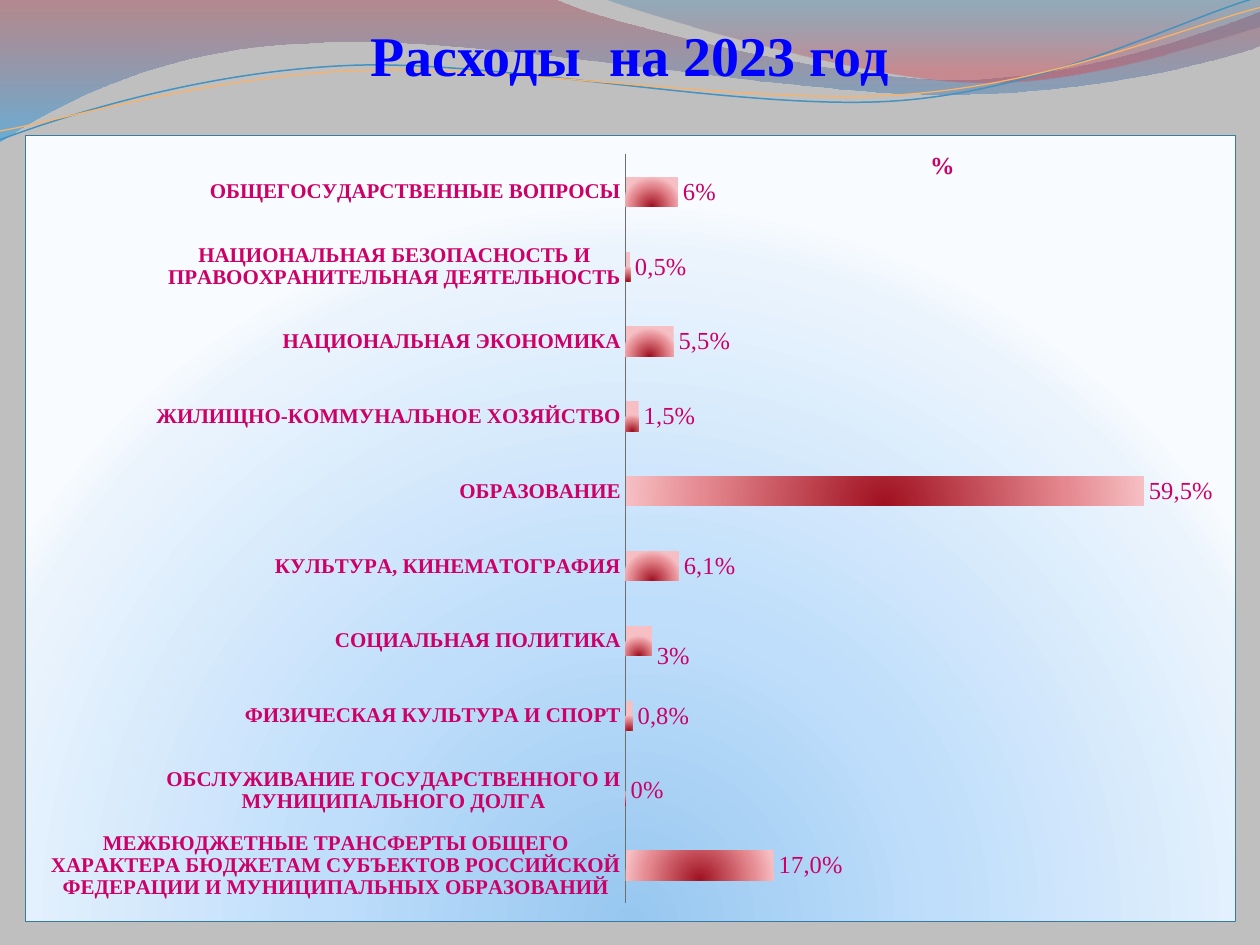
from math import cos, radians, sin

from pptx import Presentation
from pptx.chart.data import CategoryChartData
from pptx.dml.color import RGBColor
from pptx.enum.chart import XL_CHART_TYPE, XL_LABEL_POSITION, XL_TICK_LABEL_POSITION, XL_TICK_MARK
from pptx.enum.text import MSO_ANCHOR, PP_ALIGN
from pptx.oxml import parse_xml
from pptx.oxml.ns import nsdecls, qn
from pptx.util import Inches, Pt

BAR = XL_CHART_TYPE.BAR_CLUSTERED
OUT = XL_LABEL_POSITION.OUTSIDE_END
NEAR = XL_TICK_LABEL_POSITION.NEXT_TO_AXIS
NONE = XL_TICK_MARK.NONE
BOTTOM = MSO_ANCHOR.BOTTOM
CENTER = PP_ALIGN.CENTER
FACE = "Times New Roman"
PINK = "CC0066"
hue = RGBColor.from_string
UNIT = Inches(1)
GRID = 125
GLOW = '<a:path path="circle"><a:fillToRect l="50000" t="130000" r="50000" b="-30000"/></a:path>'
DOWN = '<a:lin ang="5400000" scaled="0"/>'


def blend(stops, way):
    marks = "".join(
        f'<a:gs pos="{pos * 1000}"><a:srgbClr val="{tone}"><a:alpha val="{alpha * 1000}"/></a:srgbClr></a:gs>'
        for pos, tone, alpha in stops
    )
    return parse_xml(f'<a:gradFill {nsdecls("a")} rotWithShape="1"><a:gsLst>{marks}</a:gsLst>{way}</a:gradFill>')


def place(node, after, **parts):
    for old in node.findall(qn("c:layout")):
        node.remove(old)
    body = "".join(f'<c:{key} val="{val}"/>' for key, val in parts.items())
    lay = parse_xml(f'<c:layout {nsdecls("c")}><c:manualLayout>{body}</c:manualLayout></c:layout>')
    if after:
        node.find(qn(after)).addnext(lay)
    else:
        node.insert(0, lay)


deck = Presentation()
deck.slide_width, deck.slide_height = 10 * UNIT, int(7.5 * UNIT)
slide = deck.slides.add_slide(deck.slide_layouts[6])
slide.background.fill.solid()
slide.background.fill.fore_color.rgb = hue("BFBFBF")

waves = [
    {"start": (0, 0), "turn": 0, "stops": [(0, "A84752", 45), (100, "249FE6", 55)],
     "legs": [(4.4, -0.01), (4.76, 0.17, 6.64, 0.63, 7.58, 0.63), (8.53, 0.63, 9.58, 0.26, 10, 0.09),
              (10.01, 0.36), (9.83, 0.44, 8.7, 0.76, 7.46, 0.75), (6.22, 0.75, 3.82, 0.28, 2.57, 0.34),
              (1.29, 0.36, 0.46, 0.83, -0.01, 1.13)]},
    {"start": (4.79, -0.01), "turn": 0, "stops": [(0, "2A7EAF", 30), (80, "D24B5A", 45)],
     "legs": [(5.09, 0.11, 6.82, 0.62, 7.69, 0.65), (8.56, 0.69, 9.61, 0.32, 10, 0.21), (10, 0)]},
    {"start": (0, 1.11), "turn": -2.7, "line": ("4592BF", 0.85),
     "legs": [(0.48, 0.93, 1.58, 0.57, 2.77, 0.52), (3.95, 0.47, 5.93, 0.89, 7.13, 0.8),
              (8.33, 0.71, 9.38, 0.15, 9.98, -0.02)]},
    {"start": (0, 1.04), "turn": -2.7, "line": ("F9B268", 0.75),
     "legs": [(0.47, 0.96, 1.64, 0.61, 2.83, 0.56), (4.03, 0.51, 5.97, 0.84, 7.17, 0.75),
              (8.36, 0.67, 9.41, 0.21, 10, 0.06)]},
]
for wave in waves:
    dots = [wave["start"]]
    for leg in wave["legs"]:
        dots += zip(leg[::2], leg[1::2])
    turn = radians(-wave["turn"])
    mx, my = 5, 0.58
    spots = [(int(UNIT * (mx + (x - mx) * cos(turn) - (y - my) * sin(turn))),
              int(UNIT * (my + (x - mx) * sin(turn) + (y - my) * cos(turn)))) for x, y in dots]
    pen = slide.shapes.build_freeform(*spots[0], scale=1.0)
    pen.add_line_segments(spots[1:], close="stops" in wave)
    shape = pen.convert_to_shape()
    shape.shadow.inherit = False
    shape.rotation = wave["turn"]
    edges = iter(list(shape._element.iter(qn("a:lnTo"))))
    for leg in wave["legs"]:
        edge = next(edges)
        if len(leg) == 6:
            bend = parse_xml(f'<a:cubicBezTo {nsdecls("a")}/>')
            edge.addprevious(bend)
            for part in (edge, next(edges), next(edges)):
                bend.append(part[0])
                part.getparent().remove(part)
    if "stops" in wave:
        shape.line.fill.background()
        shape._element.spPr.find(qn("a:custGeom")).addnext(blend(wave["stops"], DOWN))
    else:
        shape.fill.background()
        tone, width = wave["line"]
        shape.line.color.rgb = hue(tone)
        shape.line.width = Pt(width)

box = slide.shapes.add_textbox(0, int(0.23 * UNIT), 10 * UNIT, int(0.47 * UNIT))
frame = box.text_frame
form = {"word_wrap": True, "vertical_anchor": BOTTOM, "margin_left": 0, "margin_right": 0,
        "margin_top": Inches(0.05), "margin_bottom": 0}
for key, val in form.items():
    setattr(frame, key, val)
head = frame.paragraphs[0]
head.alignment = CENTER
run = head.add_run()
run.text = "Расходы  на 2023 год"

rows = [
    ("МЕЖБЮДЖЕТНЫЕ ТРАНСФЕРТЫ ОБЩЕГО ХАРАКТЕРА БЮДЖЕТАМ СУБЪЕКТОВ РОССИЙСКОЙ ФЕДЕРАЦИИ "
     "И МУНИЦИПАЛЬНЫХ ОБРАЗОВАНИЙ", 0.17, "17,0%"),
    ("ОБСЛУЖИВАНИЕ ГОСУДАРСТВЕННОГО И МУНИЦИПАЛЬНОГО ДОЛГА", 0, "0%"),
    ("ФИЗИЧЕСКАЯ КУЛЬТУРА И СПОРТ", 0.008, "0,8%"),
    ("СОЦИАЛЬНАЯ ПОЛИТИКА", 0.03, "3%"),
    ("КУЛЬТУРА, КИНЕМАТОГРАФИЯ", 0.061, "6,1%"),
    ("ОБРАЗОВАНИЕ", 0.595, "59,5%"),
    ("ЖИЛИЩНО-КОММУНАЛЬНОЕ ХОЗЯЙСТВО", 0.015, "1,5%"),
    ("НАЦИОНАЛЬНАЯ ЭКОНОМИКА", 0.055, "5,5%"),
    ("НАЦИОНАЛЬНАЯ БЕЗОПАСНОСТЬ И ПРАВООХРАНИТЕЛЬНАЯ ДЕЯТЕЛЬНОСТЬ", 0.005, "0,5%"),
    ("ОБЩЕГОСУДАРСТВЕННЫЕ ВОПРОСЫ", 0.06, "6%"),
]
data = CategoryChartData(number_format="0.0%")
data.categories = [row[0] for row in rows]
data.add_series("%", [row[1] for row in rows])
chart = slide.shapes.add_chart(BAR, int(0.2 * UNIT), int(1.07 * UNIT), int(9.61 * UNIT),
                               int(6.25 * UNIT), data).chart
chart.has_legend = False
chart.has_title = True
chart.chart_title.include_in_layout = False
title = chart.chart_title.text_frame.paragraphs[0].add_run()
title.text = "%"
root = chart._chartSpace
place(root.find(".//" + qn("c:title")), "c:tx", xMode="edge", yMode="edge", x=93 / GRID, y=1.5 / GRID)
place(root.find(".//" + qn("c:plotArea")), None, layoutTarget="inner", xMode="edge", yMode="edge",
      x=62 / GRID, y=3 / GRID, w=63 / GRID, h=119 / GRID)

back = parse_xml(f'<c:spPr {nsdecls("c", "a")}><a:ln w="9525"><a:solidFill><a:srgbClr val="387AA1"/>'
                 '</a:solidFill><a:prstDash val="solid"/></a:ln></c:spPr>')
back.insert(0, blend([(0, "97C7EF", 100), (43, "BFDEFB", 100), (93, "EBF4FD", 100),
                      (100, "F8FBFF", 100)], GLOW))
root.find(qn("c:chart")).addnext(back)

side, base = chart.category_axis, chart.value_axis
form = {"major_tick_mark": NONE, "minor_tick_mark": NONE, "has_major_gridlines": False}
for axis in (side, base):
    for key, val in form.items():
        setattr(axis, key, val)
side.tick_label_position = NEAR
side.format.line.color.rgb = hue("6F6F6F")
side.format.line.width = Pt(0.75)
base.tick_labels.number_format = "0.0%"
base.tick_labels.number_format_is_linked = False
base.visible = False

plot = chart.plots[0]
plot.gap_width, plot.overlap, plot.vary_by_categories = 150, -25, False
bars = plot.series[0]
bars.invert_if_negative = False
bars._element.get_or_add_spPr().insert(0, blend(
    [(0, "A01020", 100), (70, "E5888F", 100), (100, "F6BFC4", 100)], GLOW))

fonts = [(run.font, 32, True, "0000FF"), (chart.font, 12, True, PINK), (side.tick_labels.font, 12, True, PINK),
         (title.font, 14, True, PINK)]
marks = bars.data_labels
marks.show_value, marks.position, marks.number_format = True, OUT, "0.0%"
marks.number_format_is_linked = False
fonts.append((marks.font, 14, False, PINK))
for spot, (name, val, text) in enumerate(rows):
    mark = bars.points[spot].data_label
    note = mark.text_frame.paragraphs[0].add_run()
    note.text = text
    mark.position = OUT
    fonts.append((note.font, 14, False, PINK))
    if text == "3%":
        place(bars._element.find(qn("c:dLbls")).findall(qn("c:dLbl"))[-1], "c:idx", x=0, y=0.02)
for font, size, bold, tone in fonts:
    for key, val in {"name": FACE, "size": Pt(size), "bold": bold}.items():
        setattr(font, key, val)
    font.color.rgb = hue(tone)

deck.save("out.pptx")
